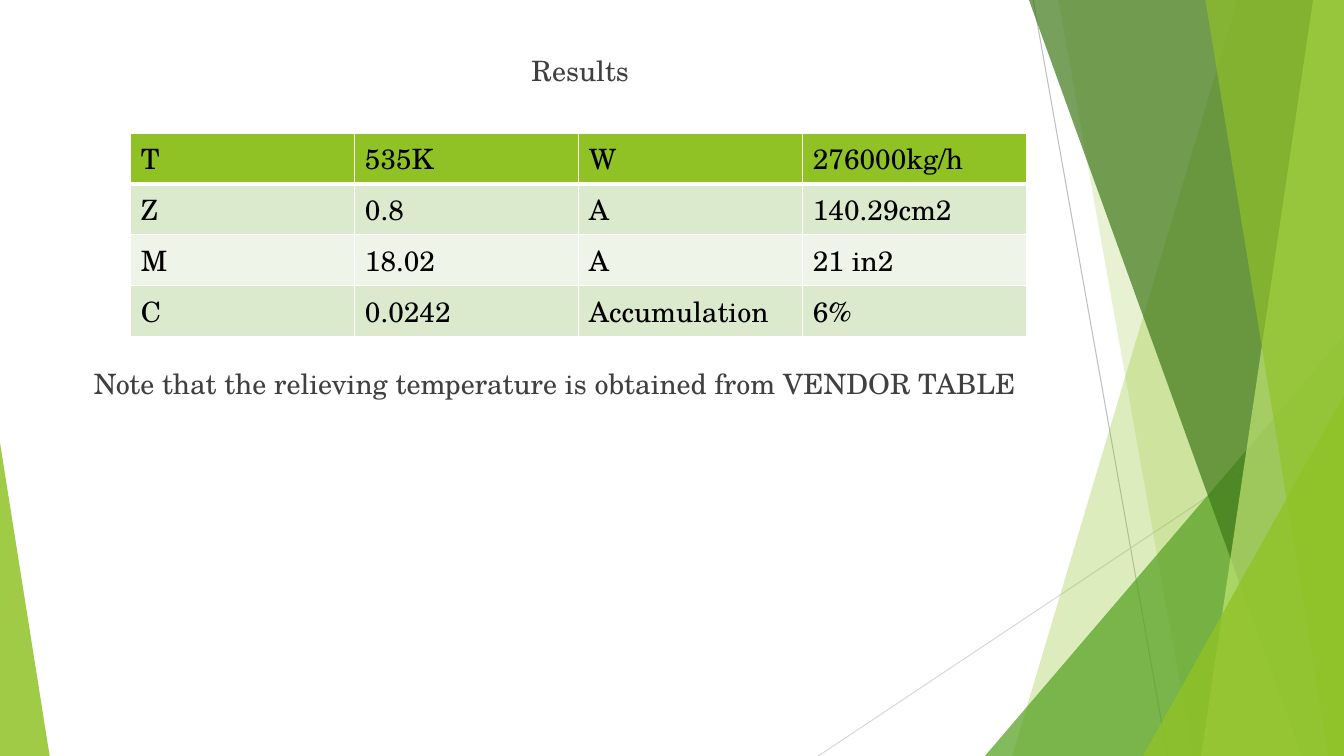
import pptx
import pptx.dml.color
import pptx.enum.shapes
import pptx.enum.text
import pptx.oxml
import pptx.oxml.ns
import pptx.util

Pt = pptx.util.Pt
FONT = "TeX Gyre Schola"
GREEN = "90C226"
PAGE_BOX = (0, 0, 960, 540)
ROWS = [
    ("T", "535K", "W", "276000kg/h"),
    ("Z", "0.8", "A", "140.29cm2"),
    ("M", "18.02", "A", "21 in2"),
    ("C", "0.0242", "Accumulation", "6%"),
]
ROW_FILLS = [GREEN, "DBE9CD", "EEF4E8", "DBE9CD"]


def color(value):
    return pptx.dml.color.RGBColor.from_string(value)


def add_xml(parent, tag, **attributes):
    child = pptx.oxml.parse_xml(f"<a:{tag} {pptx.oxml.ns.nsdecls('a')}/>")
    for name, value in attributes.items():
        child.set(name, str(value))
    parent.append(child)
    return child


def paint(shape, fill, opacity):
    shape.shadow.inherit = False
    shape.line.fill.background()
    shape.fill.solid()
    shape.fill.fore_color.rgb = color(fill)
    tint = shape.fill._xPr.find(".//" + pptx.oxml.ns.qn("a:srgbClr"))
    add_xml(tint, "alpha", val=opacity * 1000)


def style_text(para, value):
    for run in para.runs:
        run.font.name = FONT
        run.font.size = Pt(20)
        run.font.color.rgb = color(value)


def add_line(page, start, end, value):
    line = page.shapes.add_connector(
        pptx.enum.shapes.MSO_CONNECTOR.STRAIGHT, *map(Pt, start + end))
    line.line.color.rgb = color(value)
    line.line.width = Pt(0.75)
    add_xml(line._element.spPr, "effectLst")


def add_panel(page, box, top_x, bottom_x, fill, opacity):
    left, top, width, height = box
    right, bottom = left + width, top + height
    builder = page.shapes.build_freeform(left + top_x, top, scale=float(Pt(1)))
    builder.add_line_segments(
        [(right, top), (right, bottom), (left + bottom_x, bottom)])
    paint(builder.convert_to_shape(), fill, opacity)


def add_corner(page, box, width, height, peak, fill, opacity):
    left, top, full_width, full_height = box
    corner = page.shapes.add_shape(
        pptx.enum.shapes.MSO_SHAPE.ISOSCELES_TRIANGLE,
        Pt(left + peak * (full_width - width)), Pt(top + full_height - height),
        Pt(width), Pt(height))
    corner.adjustments[0] = peak
    paint(corner, fill, opacity)


def add_backdrop(page, box):
    left, top, width, height = box
    right, bottom = left + width, top + height
    add_line(page, (left + 738, top), (left + 834, bottom), "BFBFBF")
    add_line(page, (right, top + 290), (left + 584.5, bottom), "D9D9D9")
    add_panel(page, box, 884, 723, GREEN, 30)
    add_panel(page, box, 756, 852, GREEN, 20)
    add_corner(page, box, 256.5, 300, 1, "54A021", 72)
    add_panel(page, box, 735, 929.5, "3F7819", 70)
    add_panel(page, box, 938, 858, "C0E474", 70)
    add_panel(page, box, 861, 949, GREEN, 65)
    add_corner(page, box, 143.5, 257, 1, GREEN, 80)
    add_corner(page, box, 35.5, 224, 0, GREEN, 85)


def add_label(page, box, text, alignment):
    label = page.shapes.add_textbox(*map(Pt, box))
    frame = label.text_frame
    frame.word_wrap = True
    frame.vertical_anchor = pptx.enum.text.MSO_ANCHOR.MIDDLE
    frame.margin_left = frame.margin_right = 0
    frame.margin_top = frame.margin_bottom = 0
    frame.text = text
    para = frame.paragraphs[0]
    para.alignment = alignment
    style_text(para, "404040")


def add_cell_borders(cell, bottom_width, top_width):
    properties = cell._tc.get_or_add_tcPr()
    widths = {"lnL": 1, "lnR": 1, "lnT": top_width, "lnB": bottom_width}
    for tag, width in widths.items():
        border = add_xml(properties, tag, w=Pt(width))
        add_xml(add_xml(border, "solidFill"), "srgbClr", val="FFFFFF")


def add_results_table(page, box):
    left, top, width, height = map(Pt, box)
    table = page.shapes.add_table(
        len(ROWS), len(ROWS[0]), left, top, width, height).table
    for row_index, (values, fill) in enumerate(zip(ROWS, ROW_FILLS)):
        for column_index, value in enumerate(values):
            cell = table.cell(row_index, column_index)
            cell.text = value
            style_text(cell.text_frame.paragraphs[0], "000000")
            for run in cell.text_frame.paragraphs[0].runs:
                run.font.bold = False
            add_cell_borders(cell, 3 if row_index == 0 else 1,
                             3 if row_index == 1 else 1)
            cell.fill.solid()
            cell.fill.fore_color.rgb = color(fill)


def main():
    deck = pptx.Presentation()
    deck.slide_width, deck.slide_height = map(Pt, PAGE_BOX[2:])
    page = deck.slides.add_slide(deck.slide_layouts[6])
    align = pptx.enum.text.PP_ALIGN
    add_backdrop(page, PAGE_BOX)
    add_label(page, (340, 36, 149, 29), "Results", align.CENTER)
    add_label(page, (67, 259.5, 680, 29),
              "Note that the relieving temperature is obtained from VENDOR TABLE",
              align.LEFT)
    add_results_table(page, (93.5, 95, 640, 145.6))
    deck.save("out.pptx")


if __name__ == "__main__":
    main()
